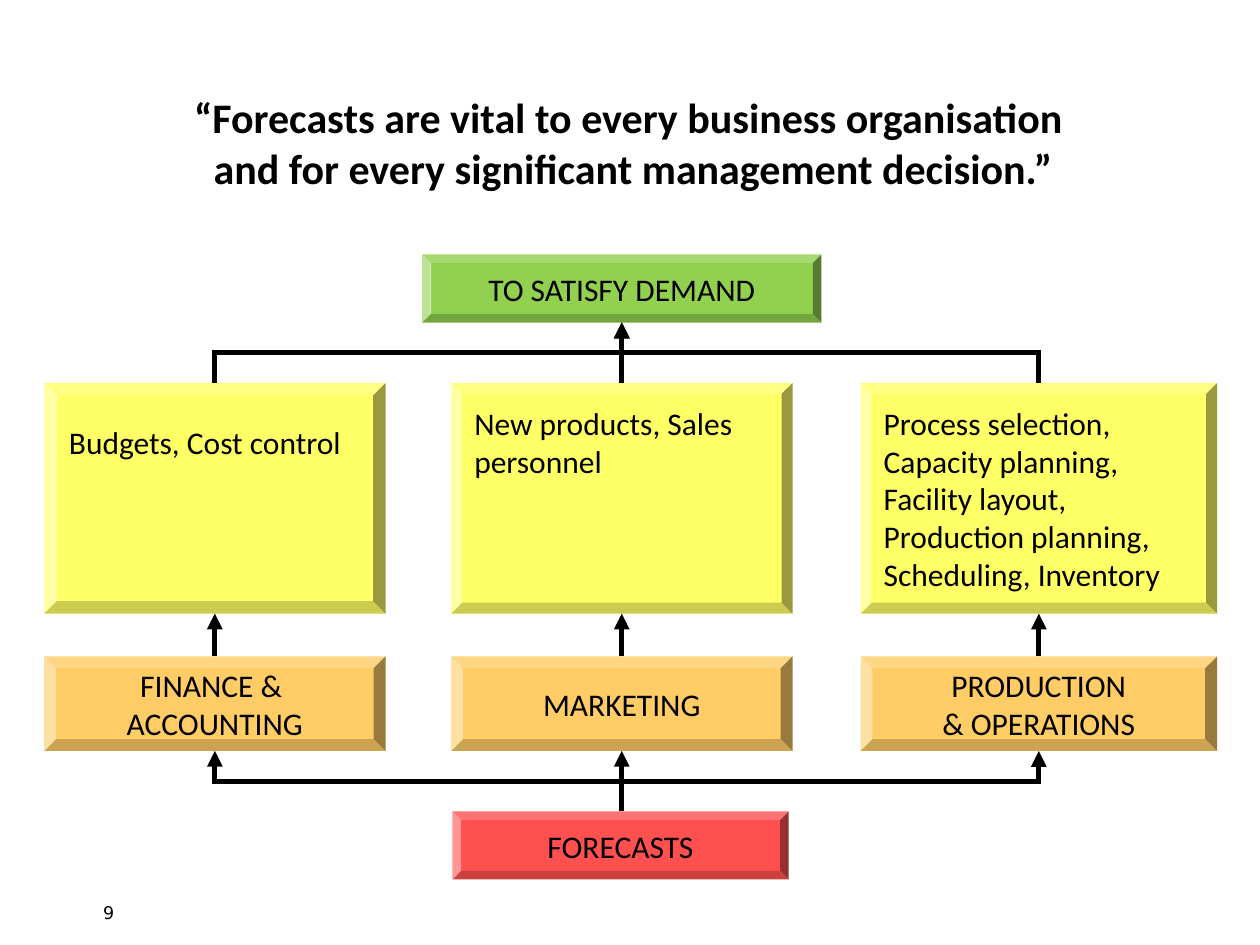
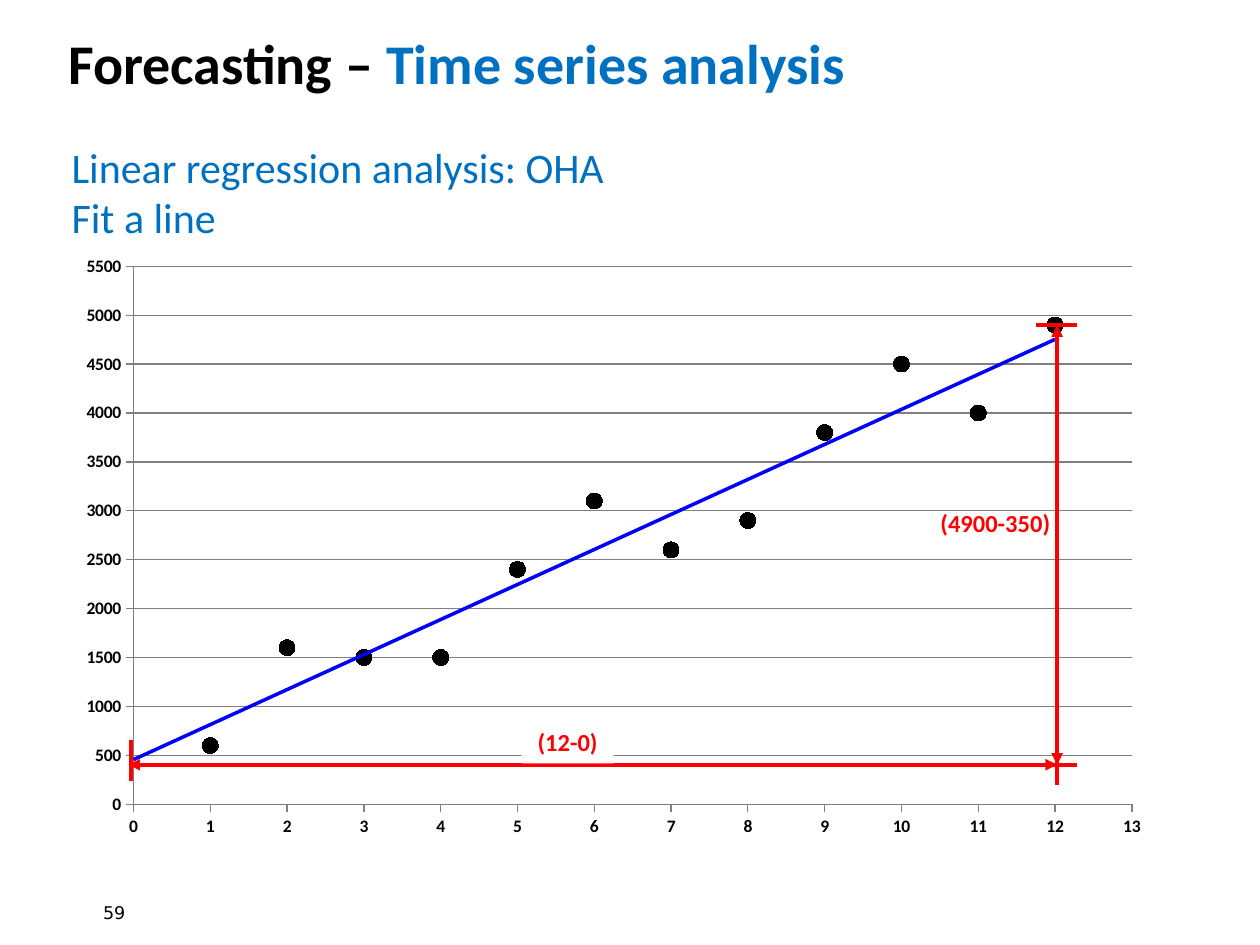
import pptx
import pptx.chart.data
import pptx.dml.color
import pptx.enum.chart
import pptx.enum.shapes
import pptx.enum.text
import pptx.oxml
import pptx.oxml.ns
import pptx.util
from pptx.util import Inches

COLORS = {
    "black": "000000", "white": "FFFFFF", "blue": "0070C0", "trend": "0000FF",
    "red": "FF0000", "gray": "808080", "forecast": "FF5050", "demand": "92D050",
    "department": "FFCC66", "decision": "FFFF66",
}
FONT = "Calibri"
ALIGN = pptx.enum.text.PP_ALIGN
ANCHOR = pptx.enum.text.MSO_ANCHOR
SHAPE = pptx.enum.shapes.MSO_SHAPE
CONNECTOR = pptx.enum.shapes.MSO_CONNECTOR

QUOTE = ["“Forecasts are vital to every business organisation ",
         "and for every significant management decision.”"]
DEMAND = ("TO SATISFY DEMAND", (3.35, 2.02, 3.17, 0.54))
FORECASTS = ("FORECASTS", (3.59, 6.44, 2.67, 0.54))
COLUMNS = [
    {"left": 0.35, "width": 2.71, "department": ["FINANCE & ", "ACCOUNTING"],
     "decisions": "Budgets, Cost control", "bevel": 0.054, "top_margin": 0.22},
    {"left": 3.58, "width": 2.71, "department": ["MARKETING"],
     "decisions": "New products, Sales personnel", "bevel": 0.047, "top_margin": 0.08},
    {"left": 6.83, "width": 2.83, "department": ["PRODUCTION", "& OPERATIONS"],
     "decisions": "Process selection, Capacity planning, Facility layout, "
                  "Production planning, Scheduling, Inventory",
     "bevel": 0.047, "top_margin": 0.08},
]
DECISION_TOP, DECISION_HEIGHT = 3.04, 1.83
DEPARTMENT_TOP, DEPARTMENT_HEIGHT = 5.21, 0.75

HEADING = [[("Forecasting – ", "black"), ("Time series analysis", "blue")]]
SUBHEADING = ["Linear regression analysis: OHA", "Fit a line"]
SALES = [600, 1600, 1500, 1500, 2400, 3100, 2600, 2900, 3800, 4500, 4000, 4900]
CHART_BOX = (0.47, 1.9, 8.67, 4.75)
PLOT_LAYOUT = {"x": 0.068, "y": 0.045, "w": 0.914, "h": 0.899}
SPAN_LEFT, SPAN_RIGHT, SPAN_TOP, SPAN_BOTTOM = 1.02, 8.39, 2.58, 6.07
RUN_LABEL = ("(12-0)", (4.14, 5.72, 0.73, 0.34))
RISE_LABEL = ("(4900-350)", (7.32, 3.98, 1.16, 0.34))


def rgb(name):
    return pptx.dml.color.RGBColor.from_string(COLORS[name])


def inches(values):
    return [Inches(value) for value in values]


def write_text(shape, lines, size=18, color="black", bold=False, font=FONT,
               align=ALIGN.LEFT, anchor=ANCHOR.TOP, top_margin=0.05):
    frame = shape.text_frame
    frame.word_wrap = True
    frame.auto_size = pptx.enum.text.MSO_AUTO_SIZE.NONE
    frame.vertical_anchor = anchor
    frame.margin_left = frame.margin_right = Inches(0.1)
    frame.margin_top, frame.margin_bottom = Inches(top_margin), Inches(0.05)
    for index, line in enumerate(lines):
        paragraph = frame.add_paragraph() if index else frame.paragraphs[0]
        paragraph.alignment = align
        runs = [(line, color)] if isinstance(line, str) else line
        for text, run_color in runs:
            run = paragraph.add_run()
            run.text = text
            run.font.name = font
            run.font.size = pptx.util.Pt(size)
            run.font.bold = bold
            run.font.color.rgb = rgb(run_color)


def add_text(slide, lines, box, **text_format):
    write_text(slide.shapes.add_textbox(*inches(box)), lines, **text_format)


def add_box(slide, kind, box, fill, lines, bevel=None, **text_format):
    shape = slide.shapes.add_shape(kind, *inches(box))
    shape.shadow.inherit = False
    shape.fill.solid()
    shape.fill.fore_color.rgb = rgb(fill)
    shape.line.fill.background()
    if bevel is not None:
        shape.adjustments[0] = bevel
    write_text(shape, lines, **text_format)


def add_line(slide, start, end, color="black", width=3, kind=CONNECTOR.STRAIGHT, ends=()):
    connector = slide.shapes.add_connector(kind, *inches(start + end))
    connector.line.color.rgb = rgb(color)
    connector.line.width = pptx.util.Pt(width)
    line = connector.line._get_or_add_ln()
    namespace = pptx.oxml.ns.nsdecls("a")
    line.append(pptx.oxml.parse_xml(f'<a:miter {namespace} lim="800000"/>'))
    for end_name in ends:
        line.append(pptx.oxml.parse_xml(f'<a:{end_name} {namespace} type="triangle"/>'))
    connector._element.spPr.append(pptx.oxml.parse_xml(f'<a:effectLst {namespace}/>'))
    return connector


def add_upward_arrow(slide, start, end):
    (start_x, start_y), (end_x, end_y) = start, end
    if start_x == end_x:
        add_line(slide, start, end, ends=["tailEnd"])
        return
    center_x, center_y = (start_x + end_x) / 2, (start_y + end_y) / 2
    half_rise, half_shift = (start_y - end_y) / 2, (end_x - start_x) / 2
    connector = add_line(slide, (center_x - half_rise, center_y - half_shift),
                         (center_x + half_rise, center_y + half_shift),
                         kind=CONNECTOR.ELBOW, ends=["tailEnd"])
    connector._element.spPr.find(pptx.oxml.ns.qn("a:xfrm")).set("rot", str(270 * 60000))


def add_slide(presentation, title, title_box, number, **title_format):
    slide = presentation.slides.add_slide(presentation.slide_layouts[5])
    heading = slide.shapes.title
    heading.left, heading.top, heading.width, heading.height = inches(title_box)
    write_text(heading, title, bold=True, **title_format)
    add_text(slide, [number], (0.72, 6.98, 0.7, 0.52), size=10,
             font="DejaVu Sans", anchor=ANCHOR.MIDDLE)
    return slide


def build_flow(presentation):
    slide = add_slide(presentation, QUOTE, (0.79, 0.68, 8.47, 0.91), "9",
                      size=24, align=ALIGN.CENTER)
    centered = {"align": ALIGN.CENTER, "anchor": ANCHOR.MIDDLE, "bevel": 0.125}
    for (label, box), fill in ((FORECASTS, "forecast"), (DEMAND, "demand")):
        add_box(slide, SHAPE.BEVEL, box, fill, [label], **centered)
    middle = COLUMNS[1]["left"] + COLUMNS[1]["width"] / 2
    demand_bottom = DEMAND[1][1] + DEMAND[1][3]
    for column in COLUMNS:
        left, width = column["left"], column["width"]
        center = left + width / 2
        add_box(slide, SHAPE.BEVEL, (left, DEPARTMENT_TOP, width, DEPARTMENT_HEIGHT),
                "department", column["department"], **centered)
        add_box(slide, SHAPE.BEVEL, (left, DECISION_TOP, width, DECISION_HEIGHT),
                "decision", [column["decisions"]], bevel=column["bevel"],
                top_margin=column["top_margin"])
        add_upward_arrow(slide, (middle, FORECASTS[1][1]),
                         (center, DEPARTMENT_TOP + DEPARTMENT_HEIGHT))
        add_upward_arrow(slide, (center, DEPARTMENT_TOP),
                         (center, DECISION_TOP + DECISION_HEIGHT))
        add_upward_arrow(slide, (center, DECISION_TOP), (middle, demand_bottom))


def style_axis(axis, maximum, step, gridlines):
    axis.minimum_scale, axis.maximum_scale, axis.major_unit = 0, maximum, step
    axis.major_tick_mark = pptx.enum.chart.XL_TICK_MARK.OUTSIDE
    axis.minor_tick_mark = pptx.enum.chart.XL_TICK_MARK.NONE
    axis.has_major_gridlines = gridlines
    axis.tick_labels.font.bold = True
    axis.tick_labels.font.size = pptx.util.Pt(10)
    axis.format.line.color.rgb = rgb("gray")
    if gridlines:
        axis.major_gridlines.format.line.color.rgb = rgb("gray")


def add_sales_chart(slide):
    data = pptx.chart.data.XyChartData()
    points = data.add_series("Series 1")
    for month, sales in enumerate(SALES, start=1):
        points.add_data_point(month, sales)
    chart = slide.shapes.add_chart(pptx.enum.chart.XL_CHART_TYPE.XY_SCATTER,
                                   *inches(CHART_BOX), data).chart
    chart.has_legend = chart.has_title = False
    chart.font.name = FONT
    chart.font.size = pptx.util.Pt(10)
    chart.font.color.rgb = rgb("black")
    style_axis(chart.category_axis, 13, 1, False)
    style_axis(chart.value_axis, 5500, 500, True)

    plot = chart.plots[0]
    plot.vary_by_categories = False
    series = plot.series[0]
    series.format.line.fill.background()
    series.marker.style = pptx.enum.chart.XL_MARKER_STYLE.CIRCLE
    series.marker.size = 9
    series.marker.format.fill.solid()
    series.marker.format.fill.fore_color.rgb = rgb("black")
    series.marker.format.line.color.rgb = rgb("black")

    qn, namespaces = pptx.oxml.ns.qn, pptx.oxml.ns.nsdecls("c", "a")
    series._element.find(qn("c:xVal")).addprevious(pptx.oxml.parse_xml(
        f'<c:trendline {namespaces}><c:spPr><a:ln w="25400"><a:solidFill>'
        f'<a:srgbClr val="{COLORS["trend"]}"/></a:solidFill></a:ln></c:spPr>'
        '<c:trendlineType val="linear"/><c:backward val="1"/>'
        '<c:dispRSqr val="0"/><c:dispEq val="0"/></c:trendline>'))
    plot_area = chart._chartSpace.chart.plotArea
    for layout in plot_area.findall(qn("c:layout")):
        plot_area.remove(layout)
    modes = '<c:xMode val="edge"/><c:yMode val="edge"/>'
    sizes = "".join(f'<c:{key} val="{value}"/>' for key, value in PLOT_LAYOUT.items())
    plot_area.insert(0, pptx.oxml.parse_xml(
        f'<c:layout {namespaces}><c:manualLayout><c:layoutTarget val="inner"/>'
        f'{modes}{sizes}</c:manualLayout></c:layout>'))


def build_regression(presentation):
    slide = add_slide(presentation, HEADING, (0.44, 0.18, 7.59, 0.64), "59", size=32)
    add_text(slide, SUBHEADING, (0.47, 1.07, 5.03, 0.91), size=24, color="blue")
    add_sales_chart(slide)
    red = {"color": "red", "width": 2.25}
    corner = (SPAN_RIGHT, SPAN_BOTTOM)
    for start, end in (((SPAN_LEFT, SPAN_BOTTOM), corner), ((SPAN_RIGHT, SPAN_TOP), corner)):
        add_line(slide, start, end, ends=["headEnd", "tailEnd"], **red)
    for x, top in ((1.04, 5.87), (SPAN_RIGHT, 5.9)):
        add_line(slide, (x, top), (x, top + 0.33), **red)
    for y in (SPAN_TOP, SPAN_BOTTOM):
        add_line(slide, (SPAN_RIGHT - 0.17, y), (SPAN_RIGHT + 0.16, y), **red)
    label_format = {"size": 14, "color": "red", "bold": True, "align": ALIGN.CENTER}
    add_box(slide, SHAPE.RECTANGLE, RUN_LABEL[1], "white", [RUN_LABEL[0]], **label_format)
    add_text(slide, [RISE_LABEL[0]], RISE_LABEL[1], **label_format)


def main():
    presentation = pptx.Presentation()
    presentation.slide_width, presentation.slide_height = Inches(10), Inches(7.5)
    build_flow(presentation)
    build_regression(presentation)
    presentation.save("out.pptx")


if __name__ == "__main__":
    main()
